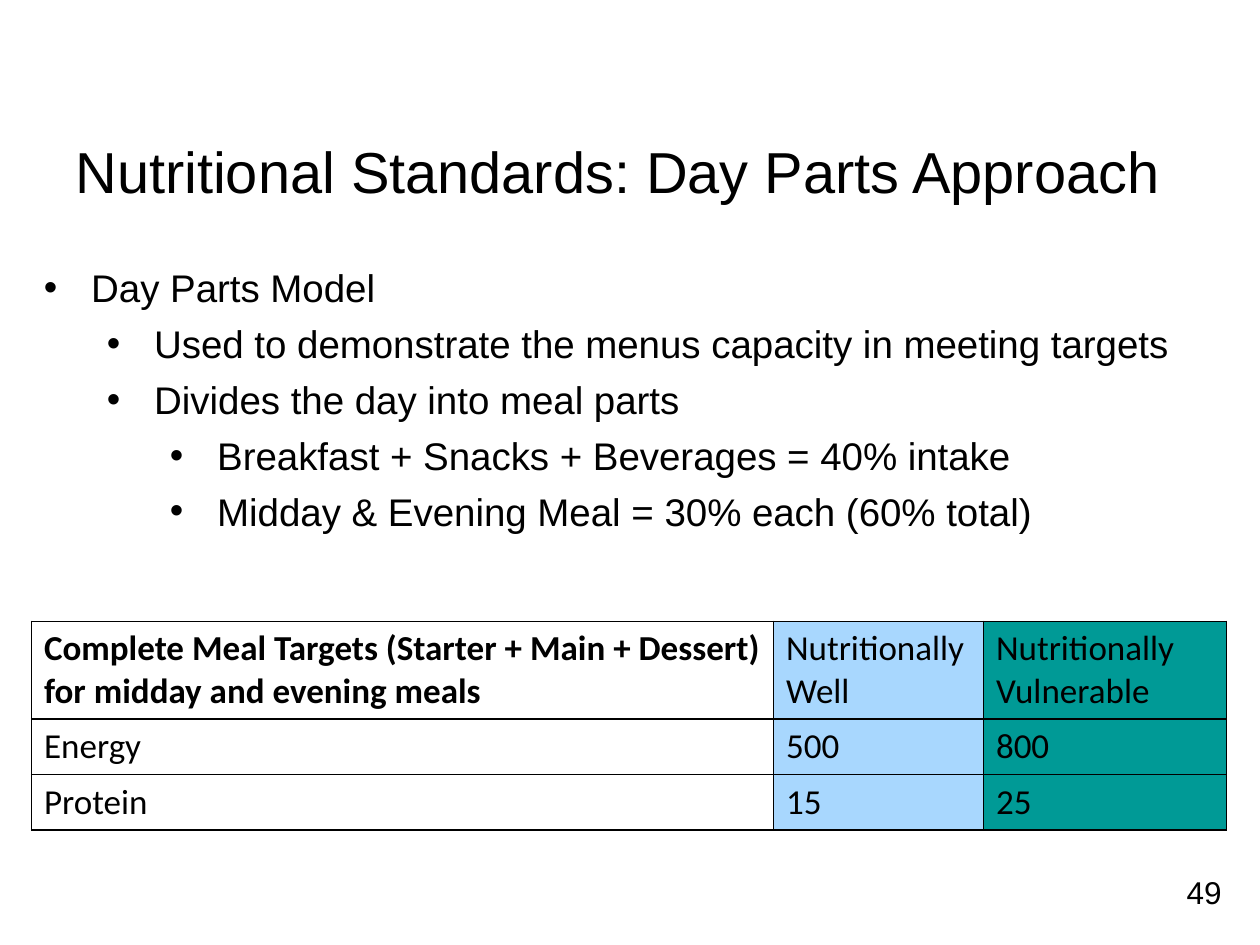
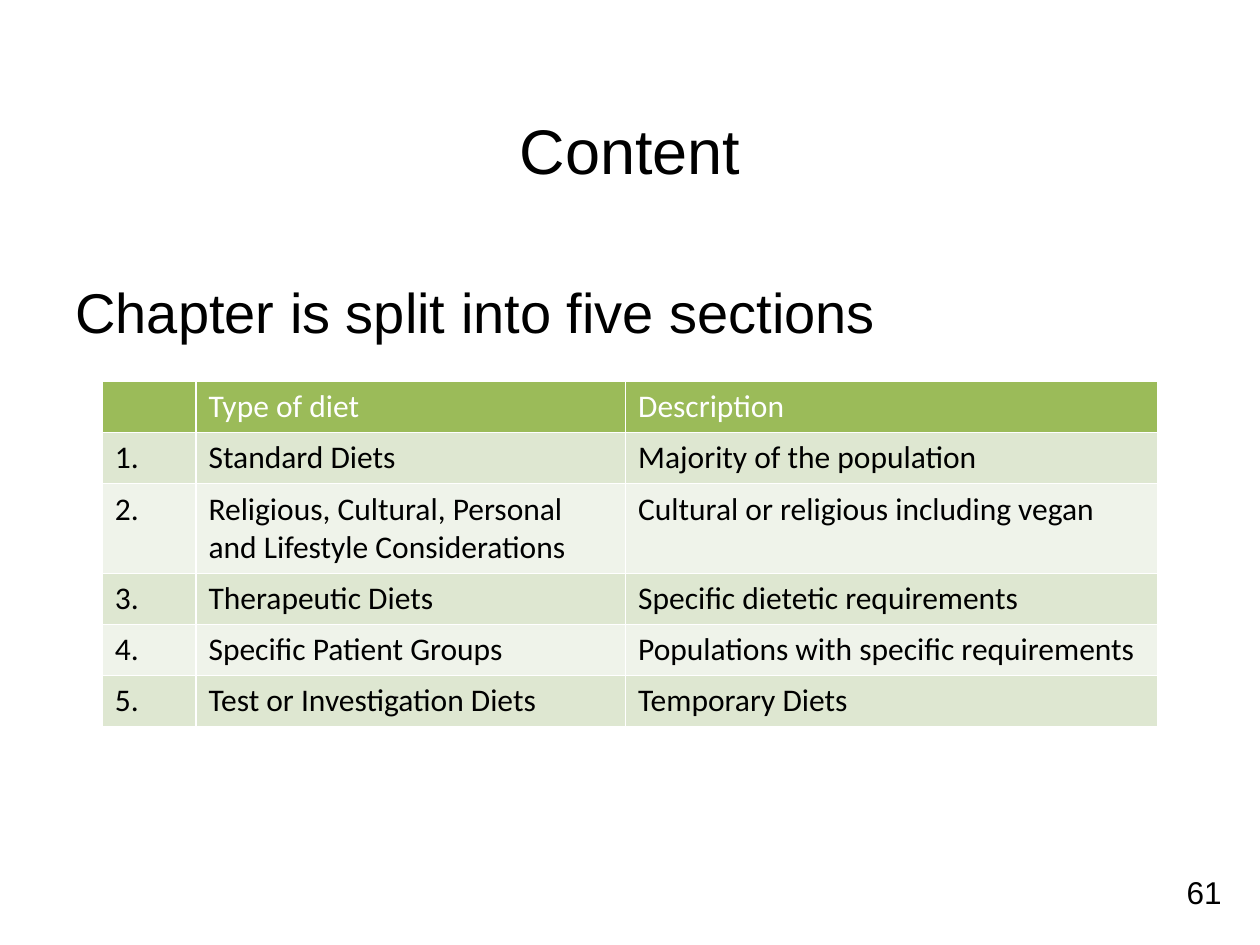
from lxml import etree
from pptx import Presentation
from pptx.dml.color import RGBColor
from pptx.enum.text import MSO_ANCHOR, PP_ALIGN
from pptx.oxml.ns import qn
from pptx.util import Pt

TOP, MIDDLE = MSO_ANCHOR.TOP, MSO_ANCHOR.MIDDLE
LEFT, CENTER = PP_ALIGN.LEFT, PP_ALIGN.CENTER
BLANK_LAYOUT = 6
HEADING_FONT, TABLE_FONT = "Arial", "Calibri"
COLORS = {
    "text": "000000",
    "white": "FFFFFF",
    "well": "A8D7FE",
    "vulnerable": "009A96",
    "header": "9BBB59",
    "odd": "DEE7D1",
    "even": "EFF3EA",
}


def rgb(name):
    """Return the named colour."""
    return RGBColor.from_string(COLORS[name])


def add_run(paragraph, text, size, font=HEADING_FONT, color="text", bold=False):
    """Add one styled run to a paragraph."""
    run = paragraph.add_run()
    run.text = text
    run.font.name, run.font.size, run.font.bold = font, Pt(size), bold
    run.font.color.rgb = rgb(color)


def add_text_box(slide, left, top, width, height, anchor=TOP):
    """Add an empty wrapping text box and return its text frame."""
    frame = slide.shapes.add_textbox(Pt(left), Pt(top), Pt(width), Pt(height)).text_frame
    frame.word_wrap = True
    frame.vertical_anchor = anchor
    return frame


def add_line(slide, text, box, size, align=LEFT, anchor=TOP):
    """Add a text box that holds one paragraph."""
    paragraph = add_text_box(slide, *box, anchor=anchor).paragraphs[0]
    paragraph.alignment = align
    add_run(paragraph, text, size)


def add_slide(presentation, title, title_box, title_size, align, number):
    """Add a slide with its title and page number."""
    slide = presentation.slides.add_slide(presentation.slide_layouts[BLANK_LAYOUT])
    add_line(slide, title, title_box, title_size, align, MIDDLE)
    add_line(slide, number, (671, 495.5, 49, 29), 18)
    return slide


def add_bullets(slide, items, box, size):
    """Add a bulleted list of (level, text) items."""
    frame = add_text_box(slide, *box)
    for index, (level, text) in enumerate(items):
        paragraph = frame.add_paragraph() if index else frame.paragraphs[0]
        paragraph.level = level
        if index:
            paragraph.space_before = Pt(5.5)
        properties = paragraph._p.get_or_add_pPr()
        properties.set("marL", str(Pt(27 + 36 * level)))
        properties.set("indent", str(-Pt(27)))
        etree.SubElement(properties, qn("a:buFont"), typeface=HEADING_FONT)
        etree.SubElement(properties, qn("a:buChar"), char="•")
        add_run(paragraph, text, size)


def set_borders(cell, color):
    """Draw a one-point border on all sides of a cell."""
    properties = cell._tc.get_or_add_tcPr()
    for side in ("lnL", "lnR", "lnT", "lnB"):
        line = etree.SubElement(properties, qn(f"a:{side}"), w=str(Pt(1)))
        fill = etree.SubElement(line, qn("a:solidFill"))
        etree.SubElement(fill, qn("a:srgbClr"), val=COLORS[color])


def add_table(slide, rows, left, top, widths, heights, size, border, cell_style):
    """Add a table; cell_style(row, column) gives fill, text colour and bold."""
    shape = slide.shapes.add_table(len(rows), len(widths), Pt(left), Pt(top),
                                   Pt(sum(widths)), Pt(sum(heights)))
    table = shape.table
    table.first_row = table.horz_banding = False
    for column, width in zip(table.columns, widths):
        column.width = Pt(width)
    for row, height in zip(table.rows, heights):
        row.height = Pt(height)
    for row_index, texts in enumerate(rows):
        for column_index, text in enumerate(texts):
            cell = table.cell(row_index, column_index)
            fill, color, bold = cell_style(row_index, column_index)
            set_borders(cell, border)
            cell.fill.solid()
            cell.fill.fore_color.rgb = rgb(fill)
            paragraph = cell.text_frame.paragraphs[0]
            for line_index, line in enumerate(text.splitlines()):
                if line_index:
                    paragraph.add_line_break()
                add_run(paragraph, line, size, TABLE_FONT, color, bold)


def target_style(row, column):
    """Colour the meal targets by column."""
    return ("white", "well", "vulnerable")[column], "text", row == column == 0


def diet_style(row, column):
    """Colour the diet types in bands under a header."""
    if row == 0:
        return "header", "white", False
    return ("odd" if row % 2 else "even"), "text", False


def add_day_parts_slide(presentation):
    """Build the slide on the day parts approach."""
    slide = add_slide(presentation, "Nutritional Standards: Day Parts Approach",
                      (36, 62, 648, 71), 33, LEFT, "49")
    add_bullets(slide, [
        (0, "Day Parts Model"),
        (1, "Used to demonstrate the menus capacity in meeting targets"),
        (1, "Divides the day into meal parts"),
        (2, "Breakfast + Snacks + Beverages = 40% intake"),
        (2, "Midday & Evening Meal = 30% each (60% total)"),
    ], (18, 147.5, 666, 328), 22)
    rows = [
        ("Complete Meal Targets (Starter + Main + Dessert)\nfor midday and evening meals",
         "Nutritionally Well", "Nutritionally Vulnerable"),
        ("Energy", "500", "800"),
        ("Protein", "15", "25"),
    ]
    add_table(slide, rows, 18, 355, (424, 120, 139), (56, 31.7, 31.7),
              20, "text", target_style)


def add_content_slide(presentation):
    """Build the slide on the sections of the chapter."""
    slide = add_slide(presentation, "Content", (36, 40.5, 648, 90), 36, CENTER, "61")
    add_line(slide, "Chapter is split into five sections", (36, 155, 648, 322), 32)
    rows = [
        ("", "Type of diet", "Description"),
        ("1.", "Standard Diets", "Majority of the population"),
        ("2.", "Religious, Cultural, Personal and Lifestyle Considerations",
         "Cultural or religious including vegan"),
        ("3.", "Therapeutic Diets", "Specific dietetic requirements"),
        ("4.", "Specific Patient Groups", "Populations with specific requirements"),
        ("5.", "Test or Investigation Diets", "Temporary Diets"),
    ]
    heights = [51.2 if row[0] == "2." else 29.2 for row in rows]
    add_table(slide, rows, 58.5, 218, (53.5, 245.5, 304), heights,
              18, "white", diet_style)


def main():
    """Build and save the presentation."""
    presentation = Presentation()
    presentation.slide_width, presentation.slide_height = Pt(720), Pt(540)
    add_day_parts_slide(presentation)
    add_content_slide(presentation)
    presentation.save("out.pptx")


if __name__ == "__main__":
    main()
